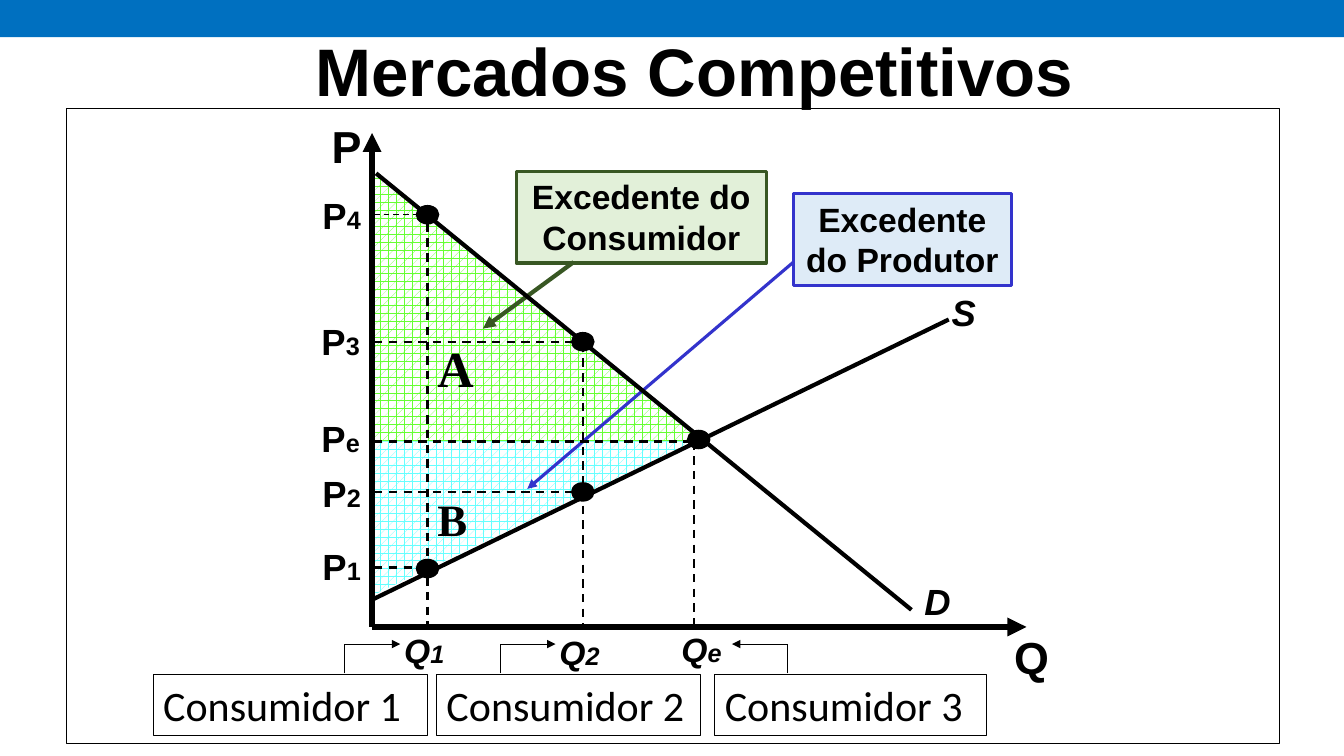
from lxml import etree
from pptx import Presentation
from pptx.dml.color import RGBColor
from pptx.enum.dml import MSO_LINE, MSO_PATTERN
from pptx.enum.shapes import MSO_CONNECTOR, MSO_SHAPE
from pptx.enum.text import MSO_ANCHOR, MSO_AUTO_SIZE, PP_ALIGN
from pptx.oxml.ns import qn
from pptx.util import Inches, Pt

RECT = MSO_SHAPE.RECTANGLE
OVAL = MSO_SHAPE.OVAL
WEDGE = MSO_SHAPE.RIGHT_TRIANGLE
STRAIGHT = MSO_CONNECTOR.STRAIGHT
DASH = MSO_LINE.DASH
PLAID = MSO_PATTERN.PLAID
MIDDLE = MSO_ANCHOR.MIDDLE
TOP = MSO_ANCHOR.TOP
LEFT = PP_ALIGN.LEFT
CENTER = PP_ALIGN.CENTER
GROW = MSO_AUTO_SIZE.SHAPE_TO_FIT_TEXT
FIXED = MSO_AUTO_SIZE.NONE

BLACK = RGBColor(0x00, 0x00, 0x00)
WHITE = RGBColor(0xFF, 0xFF, 0xFF)
BLUE = RGBColor(0x00, 0x70, 0xC0)
LIME = RGBColor(0x66, 0xFF, 0x33)
CYAN = RGBColor(0x66, 0xFF, 0xFF)
MINT = RGBColor(0xE2, 0xF0, 0xD9)
GREEN = RGBColor(0x38, 0x57, 0x23)
SKY = RGBColor(0xDE, 0xEB, 0xF7)
NAVY = RGBColor(0x33, 0x33, 0xCC)

AXIS_X, AXIS_Y = 3.69, 6.22
Q1, Q2, QE = 4.24, 5.78, 6.88
PE = 4.38


def write(shape, text, sub="", size=24, font="Arial", bold=True, italic=False,
          align=LEFT, wrap=False, grow=GROW, anchor=TOP):
    frame = shape.text_frame
    frame.word_wrap = wrap
    frame.auto_size = grow
    frame.vertical_anchor = anchor
    for num, row in enumerate(text.split("\n")):
        para = frame.add_paragraph() if num else frame.paragraphs[0]
        para.alignment = align
        for part, points in ((row, size), (sub, 18)):
            if part:
                run = para.add_run()
                run.text = part
                run.font.size = Pt(points)
                run.font.name = font
                run.font.bold = bold
                run.font.italic = italic
                run.font.color.rgb = BLACK


def label(slide, place, text, **style):
    write(slide.shapes.add_textbox(*map(Inches, place)), text, **style)


def block(slide, kind, place, fill=None, edge=None, width=0.75):
    shape = slide.shapes.add_shape(kind, *map(Inches, place))
    shape.shadow.inherit = False
    if fill is None:
        shape.fill.background()
    else:
        shape.fill.solid()
        shape.fill.fore_color.rgb = fill
    if edge is None:
        shape.line.fill.background()
    else:
        shape.line.color.rgb = edge
        shape.line.width = Pt(width)
    return shape


def wedge(slide, place, color, turn=0):
    shape = block(slide, WEDGE, place)
    shape.fill.patterned()
    shape.fill.pattern = PLAID
    shape.fill.fore_color.rgb = color
    shape.fill.back_color.rgb = WHITE
    shape.rotation = turn


def stroke(slide, start, end, color=BLACK, width=1.5, dash=None, arrow=False):
    line = slide.shapes.add_connector(STRAIGHT, *map(Inches, start + end))
    line.line.color.rgb = color
    line.line.width = Pt(width)
    if dash is not None:
        line.line.dash_style = dash
    if arrow:
        etree.SubElement(line.line._get_or_add_ln(), qn("a:tailEnd"), type="triangle")
    etree.SubElement(line.element.spPr, qn("a:effectLst"))


def areas(slide):
    wedge(slide, (AXIS_X, 1.69, 3.3, 2.69), LIME)
    gain = block(slide, RECT, (5.12, 1.7, 2.48, 0.91), MINT, GREEN, 2.25)
    write(gain, "Excedente do\nConsumidor", align=CENTER)
    stroke(slide, (5.69, 2.6), (4.79, 3.26), GREEN, 3, arrow=True)
    label(slide, (4.24, 3.29, 0.66, 0.82), "A", size=36, font="Times New Roman", wrap=True)
    wedge(slide, (4.52, 3.55, 1.53, 3.19), CYAN, 90)
    rent = block(slide, RECT, (7.87, 1.92, 2.16, 0.91), SKY, NAVY, 2.25)
    write(rent, "Excedente\ndo Produtor", align=CENTER)
    label(slide, (4.24, 4.83, 0.66, 0.74), "B", size=32, font="Times New Roman", wrap=True)
    stroke(slide, (7.87, 2.6), (5.23, 4.85), NAVY, 2.25, arrow=True)


def axes(slide):
    stroke(slide, (AXIS_X, AXIS_Y), (AXIS_X, 1.32), width=4.5, arrow=True)
    stroke(slide, (AXIS_X, AXIS_Y), (10.18, AXIS_Y), width=4.5, arrow=True)
    label(slide, (9.96, 6.2, 0.55, 0.64), "Q", size=32)
    label(slide, (3.19, 1.13, 0.5, 0.64), "P", size=32)


def curves(slide):
    stroke(slide, (AXIS_X, 5.95), (9.41, 3.17), width=3)
    label(slide, (9.34, 2.83, 0.44, 0.54), "S", size=26, italic=True)
    stroke(slide, (3.73, 1.72), (9.04, 6.05), width=3)
    label(slide, (9.07, 5.7, 0.46, 0.54), "D", size=26, italic=True)


def guides(slide):
    for sub, left, top, level, end, width in (
            ("4", 3.1, 1.87, 2.13, Q1, 1), ("3", 3.09, 3.12, 3.39, Q2, 1.5),
            ("e", 3.09, 4.08, PE, 6.97, 1.5), ("2", 3.1, 4.62, 4.88, Q2, 1.5),
            ("1", 3.1, 5.35, 5.63, Q1, 1.5)):
        label(slide, (left, top, 0.58, 0.53), "P", sub=sub, size=26)
        stroke(slide, (3.71, level), (end, level), width=width, dash=DASH)
    for sub, x, top, left, low in (
            ("1", Q1, 2.22, 3.91, 6.2), ("2", Q2, 3.41, 5.45, 6.22),
            ("e", QE, PE, 6.66, 6.19)):
        stroke(slide, (x, top), (x, AXIS_Y), dash=DASH)
        label(slide, (left, low, 0.6, 0.5), "Q", sub=sub, italic=True)
    for x, y in ((Q1, 2.13), (Q1, 5.64), (Q2, 3.39), (Q2, 4.88), (6.93, 4.36)):
        block(slide, OVAL, (x - 0.11, y - 0.09, 0.22, 0.18), BLACK, BLACK, 1)


def buyers(slide):
    for num, (left, width, bend, tip) in enumerate((
            (1.52, 2.72, 3.42, 3.97), (4.33, 2.62, 4.96, 5.51),
            (7.09, 2.69, 7.81, 7.26)), 1):
        box = block(slide, RECT, (left, 6.69, width, 0.61), edge=BLACK)
        write(box, f"Consumidor {num}", size=30, font="Calibri", bold=False, wrap=True)
        stroke(slide, (bend, 6.68), (bend, 6.39), width=0.75)
        stroke(slide, (bend, 6.39), (tip, 6.39), width=0.75, arrow=True)


def head(slide):
    title = slide.shapes.title
    title.left, title.top, title.width, title.height = map(Inches, (1, 0.12, 11.78, 1.14))
    write(title, "Mercados Competitivos", size=48, align=CENTER, wrap=True,
          grow=FIXED, anchor=MIDDLE)
    title.element.getparent().append(title.element)


def main():
    deck = Presentation()
    deck.slide_width, deck.slide_height = Inches(13.33), Inches(7.5)
    slide = deck.slides.add_slide(deck.slide_layouts[5])
    block(slide, RECT, (0, 0, 13.33, 0.37), BLUE)
    block(slide, RECT, (0.66, 1.08, 12.03, 6.3), WHITE, BLACK)
    areas(slide)
    axes(slide)
    curves(slide)
    guides(slide)
    buyers(slide)
    head(slide)
    deck.save("out.pptx")


if __name__ == "__main__":
    main()
